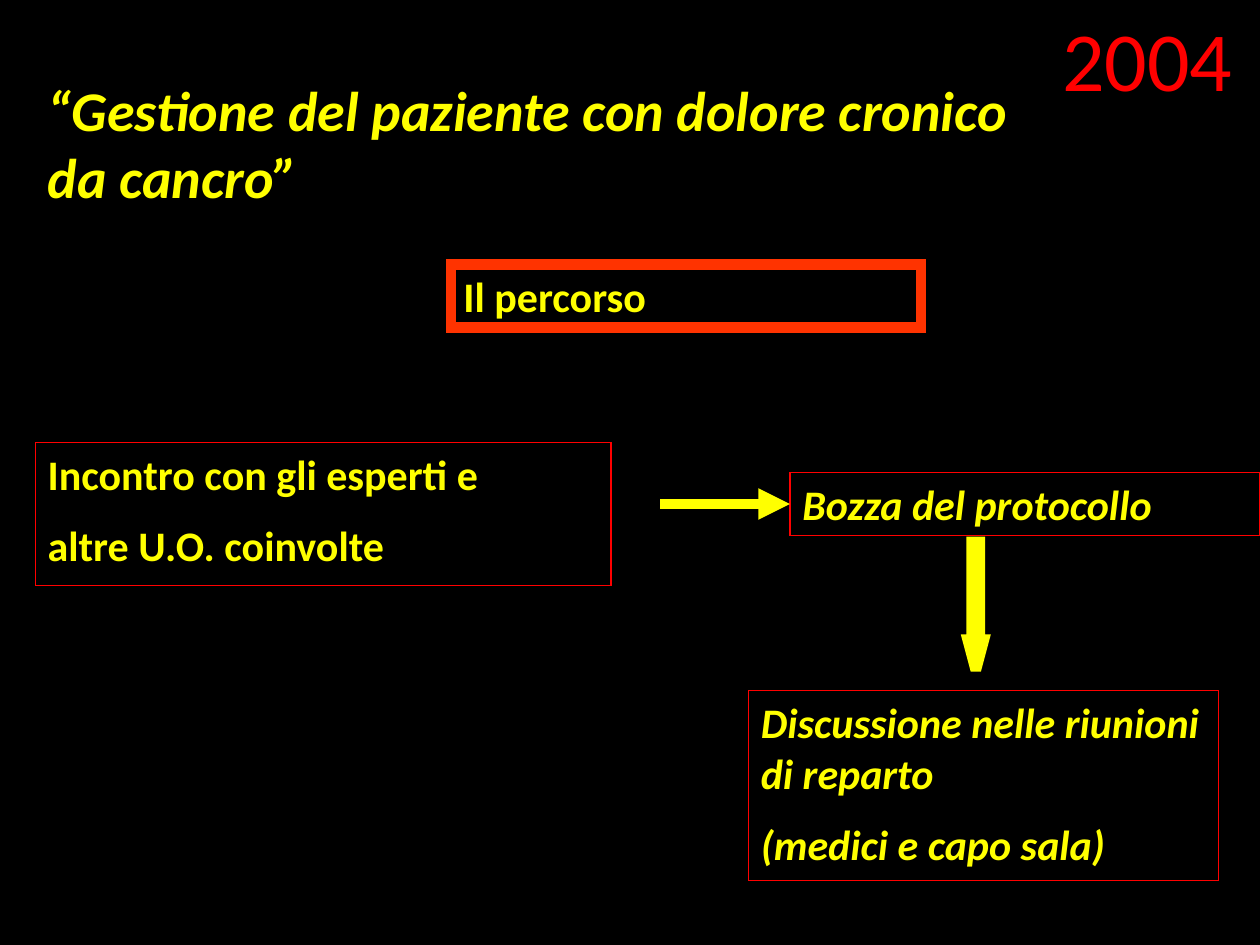
from dataclasses import dataclass

from lxml.etree import SubElement
from pptx import Presentation
from pptx.dml.color import RGBColor
from pptx.enum.shapes import MSO_CONNECTOR as Connector, MSO_SHAPE as Shape
from pptx.enum.text import MSO_ANCHOR as Anchor, MSO_AUTO_SIZE as AutoSize, PP_ALIGN as Align
from pptx.oxml.ns import qn
from pptx.util import Inches, Pt


@dataclass(frozen=True)
class Theme:
    font: str = "Calibri"
    background: RGBColor = RGBColor(0, 0, 0)
    accent: RGBColor = RGBColor(0xFF, 0xFF, 0)
    border: RGBColor = RGBColor(0xFF, 0, 0)
    frame: RGBColor = RGBColor(0xFF, 0x33, 0)
    title_size: int = 32
    step_size: int = 24
    year_size: int = 48
    paragraph_gap: int = 12
    thin: float = 0.75
    thick: float = 6


@dataclass(frozen=True)
class Step:
    left: float
    top: float
    width: float
    height: float
    lines: tuple[str, ...]
    italic: bool = False
    border: RGBColor = Theme.border
    weight: float = Theme.thin


THEME = Theme()

COURSE = Step(3.58, 2.1, 3.73, 0.5, ("Il percorso",), border=THEME.frame, weight=THEME.thick)
MEETING = Step(0.28, 3.51, 4.57, 1.14, ("Incontro con gli esperti e", "altre U.O. coinvolte"))
DRAFT = Step(6.27, 3.75, 3.73, 0.5, ("Bozza del protocollo",), italic=True)
DISCUSSION = Step(5.94, 5.48, 3.73, 1.51,
                  ("Discussione nelle riunioni di reparto", "(medici e capo sala)"), italic=True)


def place(shape, left: float, top: float, width: float, height: float) -> None:
    box = {"left": left, "top": top, "width": width, "height": height}
    for name, value in box.items():
        setattr(shape, name, Inches(value))


def write(shape, lines: tuple[str, ...], size: int, color: RGBColor, align=Align.LEFT,
          gap: int = 0, wrap: bool = True, **style: bool) -> None:
    frame = shape.text_frame
    frame_format = {"word_wrap": wrap, "auto_size": AutoSize.SHAPE_TO_FIT_TEXT,
                    "vertical_anchor": Anchor.TOP}
    for name, value in frame_format.items():
        setattr(frame, name, value)
    font_format = {"name": THEME.font, "size": Pt(size), **style}
    for index, line in enumerate(lines):
        paragraph = frame.add_paragraph() if index else frame.paragraphs[0]
        paragraph.alignment = align
        paragraph.space_before = Pt(gap if index else 0)
        run = paragraph.add_run()
        run.text = line
        for name, value in font_format.items():
            setattr(run.font, name, value)
        run.font.color.rgb = color


def outline(shape, color: RGBColor, weight: float) -> None:
    shape.line.color.rgb = color
    shape.line.width = Pt(weight)
    SubElement(shape.line._get_or_add_ln(), qn("a:miter"), lim="800000")


def draw_step(slide, step: Step):
    box = slide.shapes.add_shape(Shape.RECTANGLE, 0, 0, 0, 0)
    place(box, step.left, step.top, step.width, step.height)
    box.shadow.inherit = False
    box.fill.background()
    outline(box, step.border, step.weight)
    write(box, step.lines, THEME.step_size, THEME.accent, gap=THEME.paragraph_gap,
          bold=True, italic=step.italic)
    return box


def draw_down_arrow(slide) -> None:
    arrow = slide.shapes.add_shape(Shape.DOWN_ARROW, 0, 0, 0, 0)
    place(arrow, 7.68, 4.3, 0.13, 1.02)
    arrow.adjustments[0] = 0.5
    arrow.adjustments[1] = 1.87
    arrow.shadow.inherit = False
    arrow.fill.solid()
    arrow.fill.fore_color.rgb = THEME.accent
    outline(arrow, THEME.accent, THEME.thick)


def draw_link(slide, start: float, target: Step, target_box) -> None:
    middle = Inches(target.top + target.height / 2)
    link = slide.shapes.add_connector(Connector.STRAIGHT, Inches(start), middle,
                                      Inches(target.left), middle)
    link.end_connect(target_box, 1)
    outline(link, THEME.accent, THEME.thick)
    SubElement(link.line._get_or_add_ln(), qn("a:tailEnd"), type="triangle")
    SubElement(link._element.spPr, qn("a:effectLst"))


def main() -> None:
    deck = Presentation()
    deck.slide_width, deck.slide_height = Inches(10), Inches(7.5)
    slide = deck.slides.add_slide(deck.slide_layouts[5])
    slide.background.fill.solid()
    slide.background.fill.fore_color.rgb = THEME.background

    # Title
    title = slide.shapes.title
    place(title, 0.28, 0.55, 7.99, 1.18)
    write(title, ("“Gestione del paziente con dolore cronico", "da cancro”"),
          THEME.title_size, THEME.accent, wrap=False, bold=True, italic=True)

    # Steps of the course
    draw_step(slide, COURSE)
    draw_step(slide, MEETING)
    draft_box = draw_step(slide, DRAFT)
    draw_step(slide, DISCUSSION)

    # Arrows between the steps
    draw_down_arrow(slide)
    draw_link(slide, 5.24, DRAFT, draft_box)

    # Year
    year = slide.shapes.add_textbox(0, 0, 0, 0)
    place(year, 8.23, 0.01, 1.75, 0.91)
    write(year, ("2004",), THEME.year_size, THEME.border, align=Align.CENTER)

    deck.save("out.pptx")


if __name__ == "__main__":
    main()
